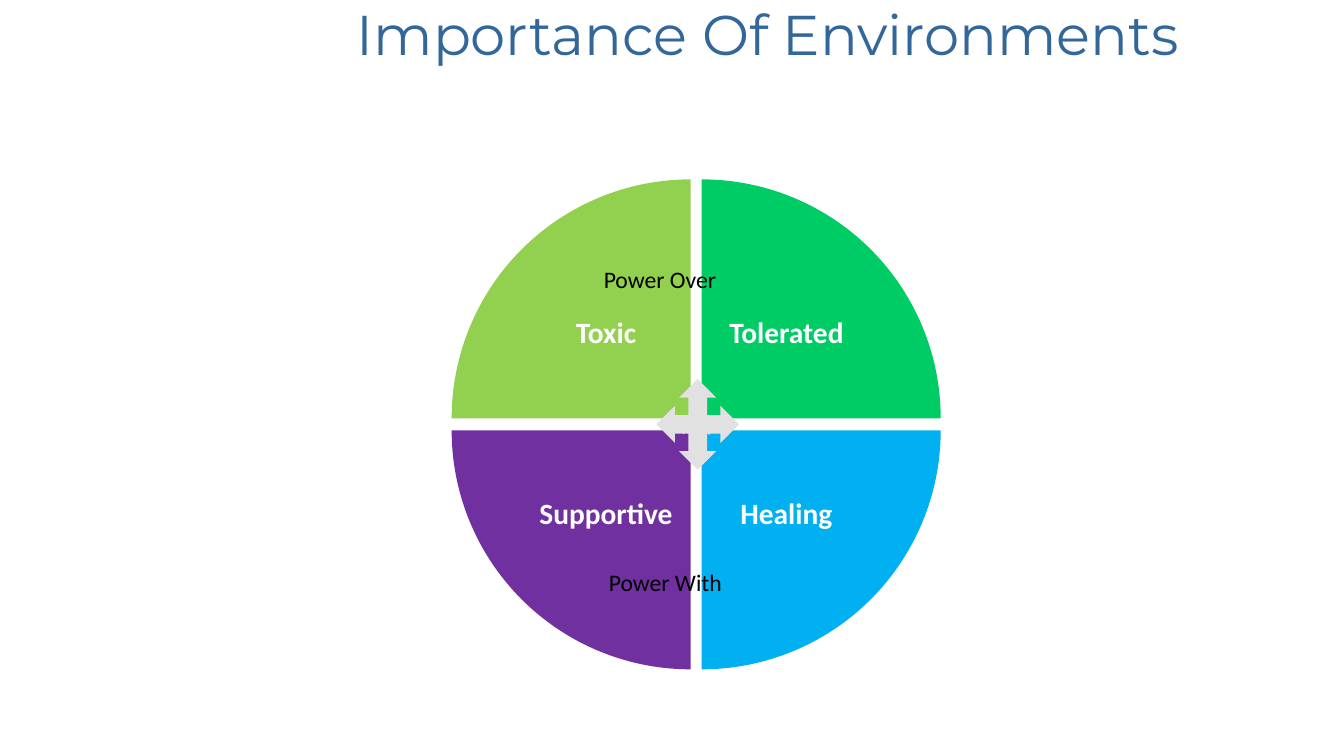
from pptx import Presentation
from pptx.dml.color import RGBColor
from pptx.enum.shapes import MSO_SHAPE
from pptx.enum.text import MSO_ANCHOR, PP_ALIGN
from pptx.util import Inches, Pt

deck = Presentation()
deck.slide_width, deck.slide_height = Inches(13.33), Inches(7.5)
slide = deck.slides.add_slide(deck.slide_layouts[6])


def draw(kind, left, top, width, height, fill, turn=0):
    shape = slide.shapes.add_shape(
        kind, Inches(left), Inches(top), Inches(width), Inches(height))
    shape.shadow.inherit = False
    shape.fill.solid()
    shape.fill.fore_color.rgb = RGBColor.from_string(fill)
    shape.line.fill.background()
    shape.rotation = turn
    return shape


def write(text, left, top, width, height, size, color, font="Calibri"):
    box = slide.shapes.add_textbox(
        Inches(left), Inches(top), Inches(width), Inches(height))
    frame = box.text_frame
    frame.word_wrap = True
    frame.text = text
    face = frame.paragraphs[0].runs[0].font
    face.name, face.size = font, Pt(size)
    face.color.rgb = RGBColor.from_string(color)
    return frame


# Title
title = write("Importance Of Environments", 3.44, 0.02, 8.49, 1.45,
              40, "336699", "Montserrat")
title.paragraphs[0].line_spacing = 0.9

# Four quarters, clockwise from top left
side, inner = 2.37, 1.68
west, east, north, south = 4.48, 6.96, 1.78, 4.27
quarters = [
    ("Toxic", "92D050", west, north),
    ("Tolerated", "00CC66", east, north),
    ("Healing", "00B0F0", east, south),
    ("Supportive", "7030A0", west, south),
]
for i, (name, fill, left, top) in enumerate(quarters):
    draw(MSO_SHAPE.PIE_WEDGE, left, top, side, side, fill, 90 * i)
    # Labels sit against the centre of the circle
    x = left + side - inner if left == west else left
    y = top + side - inner if top == north else top
    frame = write(name, x, y, inner, inner, 21, "FFFFFF")
    frame.vertical_anchor = MSO_ANCHOR.MIDDLE
    frame.margin_left = frame.margin_right = Inches(0.16)
    frame.margin_top = frame.margin_bottom = Inches(0.16)
    label = frame.paragraphs[0]
    label.alignment = PP_ALIGN.CENTER
    label.line_spacing = 0.9
    label.runs[0].font.bold = True

# Centre arrows
curve = draw(MSO_SHAPE.CIRCULAR_ARROW, 6.75, 4.21, 0.31, 0.2, "E1E1E1")
curve.element.spPr.xfrm.set("flipH", "1")
draw(MSO_SHAPE.QUAD_ARROW, 6.51, 3.76, 0.82, 0.9, "E1E1E1", 180)

# Power captions
for text, left, top in [("Power Over", 5.89, 2.58), ("Power With", 5.94, 5.58)]:
    write(text, left, top, 1.8, 0.39, 16.9, "000000")

deck.save("out.pptx")
